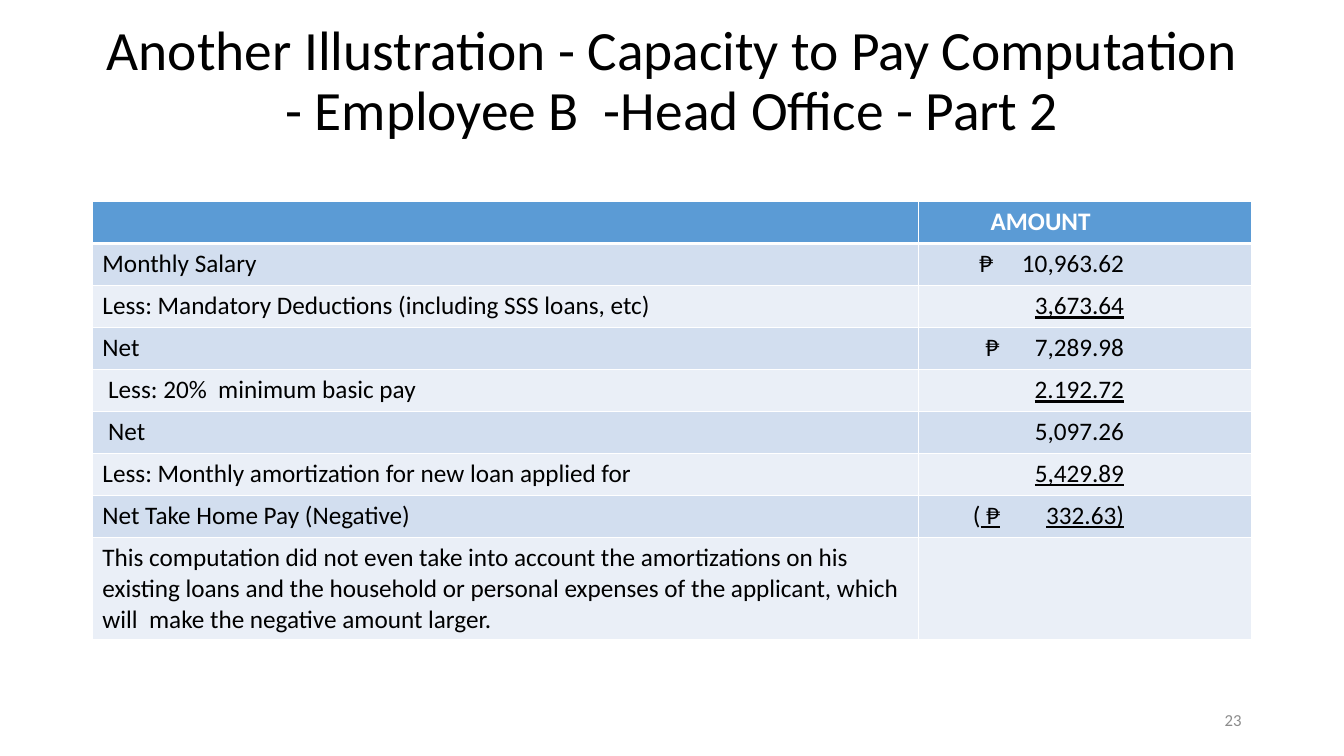
from dataclasses import dataclass

from lxml.etree import SubElement
from pptx import Presentation
from pptx.dml.color import RGBColor as Color
from pptx.enum.text import MSO_ANCHOR as Anchor, PP_ALIGN as Align
from pptx.oxml.ns import qn
from pptx.util import Emu, Pt

PX = 9525


@dataclass(frozen=True)
class Theme:
    font: str = "Calibri"
    title_size: float = 39.6
    body_size: int = 18
    number_size: int = 12
    ink: str = "000000"
    white: str = "FFFFFF"
    muted: str = "8C8C8C"
    header: str = "5B9BD5"
    bands: tuple = ("D2DEEF", "EAEFF7")
    rule: int = 1
    header_rule: int = 3


THEME = Theme()
COLUMNS = (787, 317)
ROW_HEIGHT, NOTE_HEIGHT = 40, 97
AMOUNT_EDGE = 186  # right-hand tab stop inside the amount column

# label, where the amount text starts, plain part, underlined part
ROWS = (
    ("", 59, "\tAMOUNT", ""),
    ("Monthly Salary", 48, "\t₱\t10,963.62", ""),
    ("Less: Mandatory Deductions (including SSS loans, etc)", 54, "\t", "\t3,673.64"),
    ("Net", 54, "\t₱\t7,289.98", ""),
    (" Less: 20%  minimum basic pay", 59, "\t", "\t2.192.72"),
    (" Net", 59, "\t\t5,097.26", ""),
    ("Less: Monthly amortization for new loan applied for", 48, "\t", "\t5,429.89"),
    ("Net Take Home Pay (Negative)", 42, "\t(", " ₱\t332.63)"),
    ("This computation did not even take into account the amortizations on his "
     "existing loans and the household or personal expenses of the applicant, "
     "which will  make the negative amount larger.", 0, "", ""),
)


def px(length):
    return Emu(length * PX)


def write(para, text, size=THEME.body_size, color=THEME.ink, bold=False, underline=False):
    if not text:
        return
    span = para.add_run()
    span.text = text
    font = span.font
    font.name, font.size = THEME.font, Pt(size)
    font.bold, font.underline = bold, underline
    font.color.rgb = Color.from_string(color)


def add_text(page, box, text, align, bottom_inset=5, line_spacing=1.0, **style):
    frame = page.shapes.add_textbox(*map(px, box)).text_frame
    frame.word_wrap = True
    frame.vertical_anchor = Anchor.MIDDLE
    frame.margin_bottom = px(bottom_inset)
    para = frame.paragraphs[0]
    para.alignment, para.line_spacing = align, line_spacing
    write(para, text, **style)


def set_tabs(para, start):
    stops = SubElement(para._p.get_or_add_pPr(), qn("a:tabLst"))
    for position, align in ((start, "l"), (AMOUNT_EDGE, "r")):
        SubElement(stops, qn("a:tab"), pos=str(px(position)), algn=align)


def set_cell(cell, fill, top, bottom):
    """Give the cell white borders, then its fill, in the order the schema needs."""
    properties = cell._tc.get_or_add_tcPr()
    widths = {"lnL": THEME.rule, "lnR": THEME.rule, "lnT": top, "lnB": bottom}
    for side, width in widths.items():
        line = SubElement(properties, qn(f"a:{side}"), w=str(Pt(width)))
        solid = SubElement(line, qn("a:solidFill"))
        SubElement(solid, qn("a:srgbClr"), val=THEME.white)
    cell.fill.solid()
    cell.fill.fore_color.rgb = Color.from_string(fill)


def add_computation(page, box):
    table = page.shapes.add_table(len(ROWS), len(COLUMNS), *map(px, box)).table
    for column, width in zip(table.columns, COLUMNS):
        column.width = px(width)
    for index, (label, start, plain, underlined) in enumerate(ROWS):
        is_header = index == 0
        is_note = index == len(ROWS) - 1
        table.rows[index].height = px(NOTE_HEIGHT if is_note else ROW_HEIGHT)
        fill = THEME.header if is_header else THEME.bands[(index - 1) % 2]
        top = THEME.header_rule if index == 1 else THEME.rule
        bottom = THEME.header_rule if is_header else THEME.rule
        style = {"color": THEME.white if is_header else THEME.ink, "bold": is_header}
        label_cell, amount_cell = table.rows[index].cells
        for cell in (label_cell, amount_cell):
            set_cell(cell, fill, top, bottom)
        write(label_cell.text_frame.paragraphs[0], label, **style)
        amount = amount_cell.text_frame.paragraphs[0]
        if plain:
            set_tabs(amount, start)
        write(amount, plain, **style)
        write(amount, underlined, underline=True, **style)


def main():
    deck = Presentation()
    deck.slide_width, deck.slide_height = px(1280), px(720)
    page = deck.slides.add_slide(deck.slide_layouts[6])
    add_text(page, (88, 38, 1104, 139),
             "Another Illustration - Capacity to Pay Computation "
             "- Employee B  -Head Office - Part 2",
             Align.CENTER, bottom_inset=62, line_spacing=0.9, size=THEME.title_size)
    add_computation(page, (88, 192, sum(COLUMNS), ROW_HEIGHT * 8 + NOTE_HEIGHT))
    add_text(page, (904, 667, 288, 38), "23", Align.RIGHT,
             size=THEME.number_size, color=THEME.muted)
    deck.save("out.pptx")


if __name__ == "__main__":
    main()
